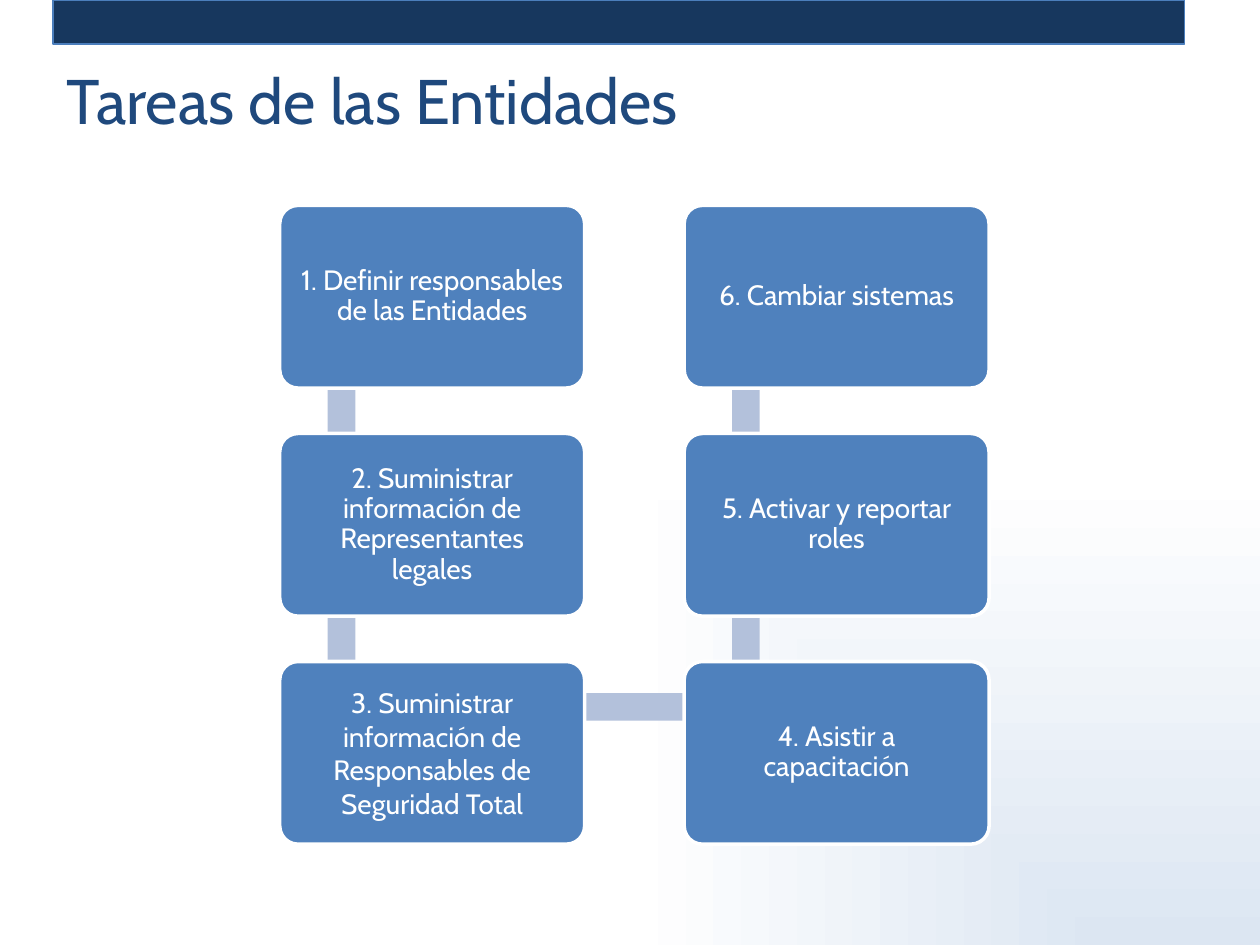
from lxml import etree
from pptx import Presentation
from pptx.dml.color import RGBColor
from pptx.enum.shapes import MSO_SHAPE as Preset
from pptx.enum.text import MSO_ANCHOR as Anchor, PP_ALIGN as Align
from pptx.oxml.ns import qn
from pptx.util import Inches, Pt

NAVY, TITLE_BLUE, BOX_BLUE = "17375E", "1F497D", "4F81BD"
BAND_EDGE, LINK, WHITE, PALE = "4B7EBC", "B3C1DB", "FFFFFF", "DCE6F2"

TASKS = [
    "1. Definir responsables de las Entidades",
    "2. Suministrar información de Representantes legales",
    "3. Suministrar información de Responsables de Seguridad Total",
    "4. Asistir a capacitación",
    "5. Activar y reportar roles",
    "6. Cambiar sistemas",
]
ROWS = 3


def color(hex_code):
    return RGBColor.from_string(hex_code)


class TaskSlide:
    font = "Cabin"
    left, top = 2.22, 1.63
    column_step, row_step = 3.21, 1.81
    box_width, box_height = 2.42, 1.45
    link_width = 0.22
    link_x, link_y = 0.49, 0.36  # link axis inside a box

    def __init__(self, slide):
        self.slide = slide

    def background(self, corner, rest):
        """Gradient that spreads from the bottom right corner."""
        fill = self.slide.background.fill
        fill.gradient()
        for stop, position, shade in zip(fill.gradient_stops, (0, 1), (corner, rest)):
            stop.position = position
            stop.color.rgb = color(shade)
        gradient = self.slide.element.find(".//" + qn("a:gradFill"))
        gradient.remove(gradient.find(qn("a:lin")))
        spread = etree.SubElement(gradient, qn("a:path"), {"path": "rect"})
        etree.SubElement(spread, qn("a:fillToRect"), l="100000", t="100000")
        etree.SubElement(gradient, qn("a:tileRect"), r="-100000", b="-100000")

    def block(self, preset, bounds, fill, edge=None, edge_width=0):
        shape = self.slide.shapes.add_shape(preset, *map(Inches, bounds))
        shape.shadow.inherit = False
        shape.fill.solid()
        shape.fill.fore_color.rgb = color(fill)
        if edge:
            shape.line.color.rgb = color(edge)
            shape.line.width = Pt(edge_width)
        else:
            shape.line.fill.background()
        return shape

    def set_text(self, frame, text, size, shade, align):
        frame.text = text
        frame.word_wrap = True
        frame.vertical_anchor = Anchor.MIDDLE
        paragraph = frame.paragraphs[0]
        paragraph.alignment = align
        font = paragraph.runs[0].font
        font.name, font.size, font.color.rgb = self.font, Pt(size), color(shade)
        return paragraph

    def title(self, text, bounds):
        box = self.slide.shapes.add_textbox(*map(Inches, bounds))
        self.set_text(box.text_frame, text, 36, TITLE_BLUE, Align.LEFT)

    def cell(self, column, row):
        return self.left + column * self.column_step, self.top + row * self.row_step

    def link(self, start, end):
        """Bar from one grid cell to a cell below it or to its right."""
        half = self.link_width / 2
        (x1, y1), (x2, y2) = self.cell(*start), self.cell(*end)
        bounds = (x1 + self.link_x - half, y1 + self.link_y - half,
                  x2 - x1 + self.link_width, y2 - y1 + self.link_width)
        self.block(Preset.RECTANGLE, bounds, LINK)

    def task(self, text, place, line_spacing):
        bounds = (*self.cell(*place), self.box_width, self.box_height)
        box = self.block(Preset.ROUNDED_RECTANGLE, bounds, BOX_BLUE, WHITE, 2)
        box.adjustments[0] = 0.1
        frame = box.text_frame
        frame.margin_left = frame.margin_right = Inches(0.11)
        frame.margin_top = frame.margin_bottom = Inches(0.11)
        paragraph = self.set_text(frame, text, 16, WHITE, Align.CENTER)
        paragraph.line_spacing = line_spacing


def main():
    deck = Presentation()
    deck.slide_width, deck.slide_height = Inches(10), Inches(7.5)
    page = TaskSlide(deck.slides.add_slide(deck.slide_layouts[6]))
    page.background(PALE, WHITE)
    page.block(Preset.RECTANGLE, (0.42, 0, 8.98, 0.35), NAVY, BAND_EDGE, 0.75)
    page.title("Tareas de las Entidades", (0.43, 0.21, 8.52, 1.15))

    # The tasks run down the first column and back up the second.
    places = [(0, row) for row in range(ROWS)] + [(1, row) for row in reversed(range(ROWS))]
    for pair in zip(places, places[1:]):
        page.link(*sorted(pair))
    for text, place in zip(TASKS, places):
        page.task(text, place, 1.0 if place == (0, 2) else 0.9)
    deck.save("out.pptx")


if __name__ == "__main__":
    main()
